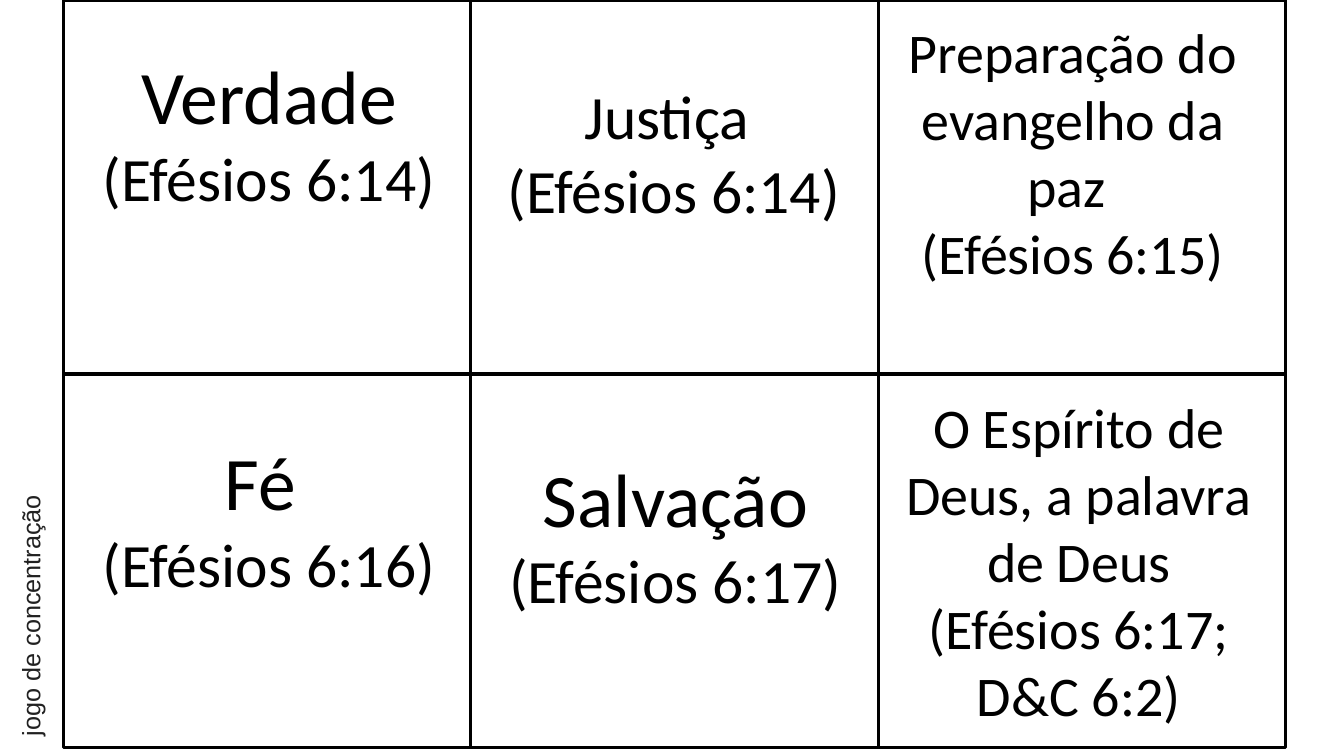
from itertools import product

from pptx import Presentation
from pptx.dml.color import RGBColor
from pptx.enum import shapes, text
from pptx.util import Inches, Pt

COLORS = {"card": "FFFFFF", "ink": "000000", "label": "212121"}
LEFT, CARD_WIDTH, CARD_HEIGHT = 0.63, 4.04, 3.71
BIG, MEDIUM, SMALL = 54, 44, 40

# Each caption: (left, top, width, height), then paragraphs of (words, size) runs.
CAPTIONS = [
    ((0.8, 0.44, 3.74, 1.75), [[("Verdade ", BIG), ("(Efésios 6:14)", MEDIUM)]]),
    ((4.6, 0.72, 4.17, 1.58), [[("Justiça ", MEDIUM)], [("(Efésios 6:14)", MEDIUM)]]),
    ((8.77, 0.12, 3.74, 2.79),
     [[("Preparação do evangelho da paz ", SMALL)], [("(Efésios 6:15)", SMALL)]]),
    ((0.8, 4.27, 3.74, 1.75), [[("Fé ", BIG)], [("(Efésios 6:16)", MEDIUM)]]),
    ((4.83, 4.43, 3.74, 1.75), [[("Salvação ", BIG), ("(Efésios 6:17)", MEDIUM)]]),
    ((8.83, 3.84, 3.74, 3.47),
     [[("O Espírito de Deus, a palavra de Deus (Efésios 6:17; D&C 6:2)", SMALL)]]),
]


def color(name):
    return RGBColor.from_string(COLORS[name])


def add_card(slide, column, row):
    card = slide.shapes.add_shape(
        shapes.MSO_SHAPE.RECTANGLE,
        Inches(LEFT + column * CARD_WIDTH), Inches(row * CARD_HEIGHT),
        Inches(CARD_WIDTH), Inches(CARD_HEIGHT))
    card.shadow.inherit = False
    card.fill.solid()
    card.fill.fore_color.rgb = color("card")
    card.line.color.rgb = color("ink")
    card.line.width = Pt(2.25)


def add_caption(slide, place, paragraphs, font="Calibri", ink="ink",
                align=text.PP_ALIGN.CENTER):
    caption = slide.shapes.add_textbox(*map(Inches, place))
    frame = caption.text_frame
    frame.word_wrap = True
    frame.auto_size = text.MSO_AUTO_SIZE.SHAPE_TO_FIT_TEXT
    for index, runs in enumerate(paragraphs):
        paragraph = frame.add_paragraph() if index else frame.paragraphs[0]
        paragraph.alignment = align
        for words, size in runs:
            run = paragraph.add_run()
            run.text = words
            for name, value in {"name": font, "size": Pt(size)}.items():
                setattr(run.font, name, value)
            run.font.color.rgb = color(ink)
    return caption


def main():
    deck = Presentation()
    deck.slide_width, deck.slide_height = Inches(13.33), Inches(7.5)
    slide = deck.slides.add_slide(deck.slide_layouts.get_by_name("Blank"))
    for column, row in product(range(3), range(2)):
        add_card(slide, column, row)
    for place, paragraphs in CAPTIONS:
        add_caption(slide, place, paragraphs)
    game_label = add_caption(
        slide, (-3.41, 3.49, 7.42, 0.4), [[("jogo de concentração", 18)]],
        font="Arial", ink="label", align=text.PP_ALIGN.LEFT)
    game_label.rotation = 270
    deck.save("out.pptx")


if __name__ == "__main__":
    main()
